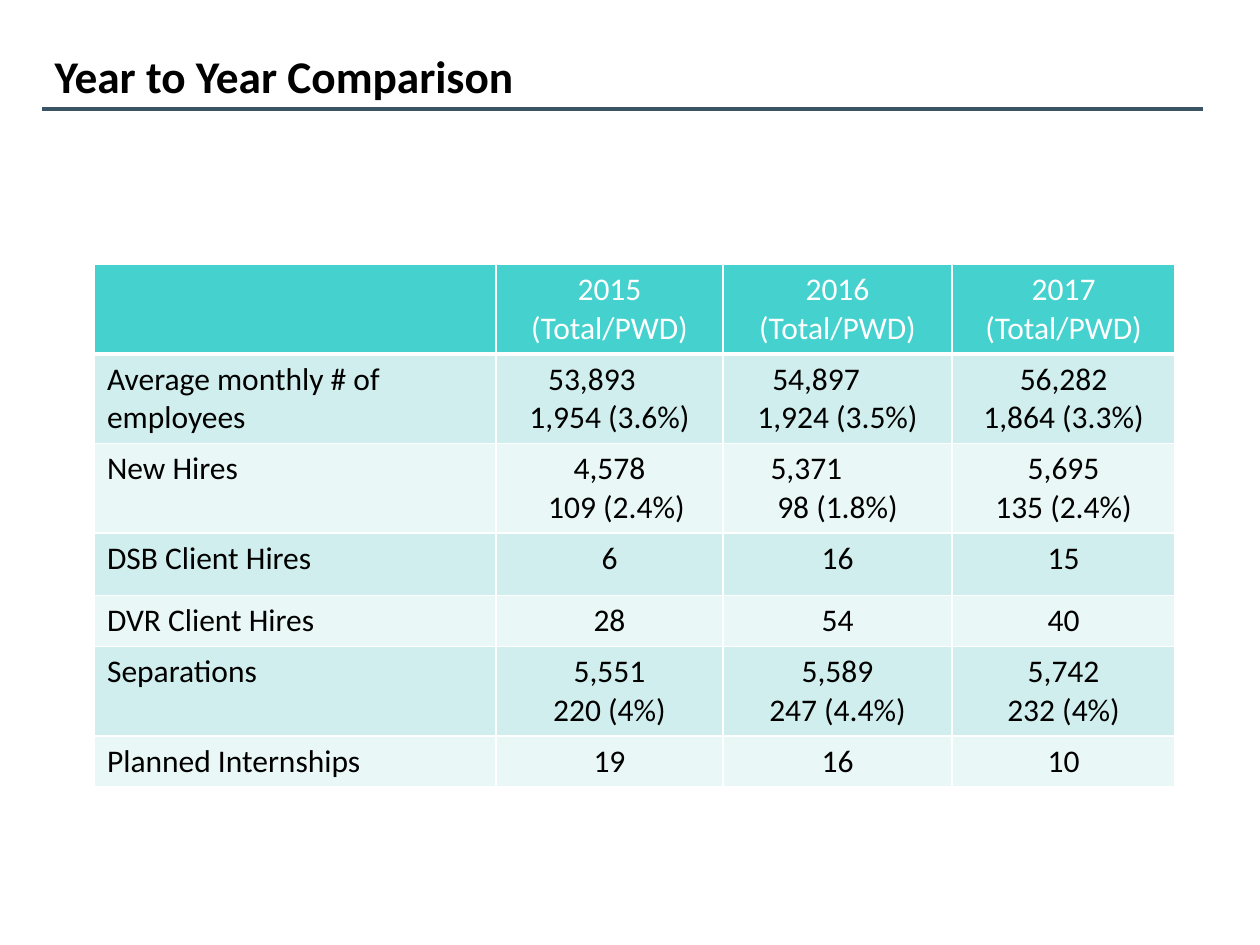
from lxml import etree
from pptx import Presentation
from pptx.dml.color import RGBColor
from pptx.enum import shapes, text
from pptx.oxml.ns import qn
from pptx.util import Pt

FONT = "Calibri"
COLORS = {"ink": "000000", "white": "FFFFFF", "rule": "3A5465",
          "header": "45D2CF", "odd": "CFEEED", "even": "E9F7F6"}

TITLE = "Year to Year Comparison"
# Each row: height, then one text per column; a line break starts a new paragraph
ROWS = [
    (51, "", "2015\n(Total/PWD)", "2016\n(Total/PWD)", "2017\n(Total/PWD)"),
    (51, "Average monthly # of employees", "53,893\n1,954 (3.6%)",
     "54,897\n1,924 (3.5%)", "56,282\n1,864 (3.3%)"),
    (51, "New Hires", "4,578\n109 (2.4%)", "5,371\n98 (1.8%)", "5,695\n135 (2.4%)"),
    (35.5, "DSB Client Hires", "6", "16", "15"),
    (29.2, "DVR Client Hires", "28", "54", "40"),
    (51, "Separations", "5,551\n220 (4%)", "5,589\n247 (4.4%)", "5,742\n232 (4%)"),
    (29.2, "Planned Internships", "19", "16", "10"),
]
COLUMN_WIDTHS = (229.5, 129.6, 131, 127.4)
# Figures set off from the centre of their cell: alignment and left indent
OFFSETS = {
    "53,893": (text.PP_ALIGN.LEFT, 22.5),
    "54,897": (text.PP_ALIGN.LEFT, 21),
    "5,371": (text.PP_ALIGN.LEFT, 20),
    "109 (2.4%)": (text.PP_ALIGN.CENTER, 8),
}


def rgb(name):
    return RGBColor.from_string(COLORS[name])


def style_font(paragraph, size, color, bold=False):
    font = paragraph.font
    font.name, font.size, font.bold = FONT, Pt(size), bold
    font.color.rgb = rgb(color)


def set_borders(cell, bottom_width):
    """Draw white cell borders; they must precede the fill in the cell's XML."""
    properties = cell._tc.get_or_add_tcPr()
    widths = {"a:lnL": 1, "a:lnR": 1, "a:lnT": 1, "a:lnB": bottom_width}
    for position, (side, width) in enumerate(widths.items()):
        border = etree.Element(qn(side), w=str(Pt(width)))
        fill = etree.SubElement(border, qn("a:solidFill"))
        etree.SubElement(fill, qn("a:srgbClr"), val=COLORS["white"])
        properties.insert(position, border)


def add_title(slide):
    title = slide.shapes.title
    title.left, title.top, title.width, title.height = Pt(24), Pt(29.5), Pt(623.5), Pt(32.5)
    frame = title.text_frame
    frame.text = TITLE
    frame.vertical_anchor = text.MSO_ANCHOR.MIDDLE
    frame.auto_size = text.MSO_AUTO_SIZE.NONE
    heading = frame.paragraphs[0]
    heading.alignment = text.PP_ALIGN.LEFT
    heading.line_spacing = 0.8
    style_font(heading, 25.9, "ink", bold=True)


def add_rule(slide):
    rule = slide.shapes.add_connector(
        shapes.MSO_CONNECTOR.STRAIGHT, Pt(24), Pt(62.5), Pt(687.5), Pt(62.5))
    rule.line.color.rgb = rgb("rule")
    rule.line.width = Pt(2.25)
    etree.SubElement(rule._element.spPr, qn("a:effectLst"))


def fill_cell(cell, content, row, column):
    is_header = row == 0
    cell.text = content
    for paragraph in cell.text_frame.paragraphs:
        style_font(paragraph, 18, "white" if is_header else "ink")
        default = text.PP_ALIGN.CENTER if column else text.PP_ALIGN.LEFT
        paragraph.alignment, indent = OFFSETS.get(paragraph.text, (default, 0))
        if indent:
            paragraph._p.get_or_add_pPr().set("marL", str(Pt(indent)))
    cell.fill.solid()
    cell.fill.fore_color.rgb = rgb("header" if is_header else "odd" if row % 2 else "even")
    set_borders(cell, bottom_width=3 if is_header else 1)


def add_comparison(slide):
    heights = [row[0] for row in ROWS]
    comparison = slide.shapes.add_table(
        len(ROWS), len(COLUMN_WIDTHS), Pt(54), Pt(151.2),
        Pt(sum(COLUMN_WIDTHS)), Pt(sum(heights))).table
    for column, width in zip(comparison.columns, COLUMN_WIDTHS):
        column.width = Pt(width)
    for row, (height, *contents) in enumerate(ROWS):
        comparison.rows[row].height = Pt(height)
        for column, content in enumerate(contents):
            fill_cell(comparison.cell(row, column), content, row, column)


def main():
    deck = Presentation()
    deck.slide_width, deck.slide_height = Pt(720), Pt(540)
    slide = deck.slides.add_slide(deck.slide_layouts.get_by_name("Title Only"))
    add_rule(slide)
    add_title(slide)
    add_comparison(slide)
    deck.save("out.pptx")


if __name__ == "__main__":
    main()
